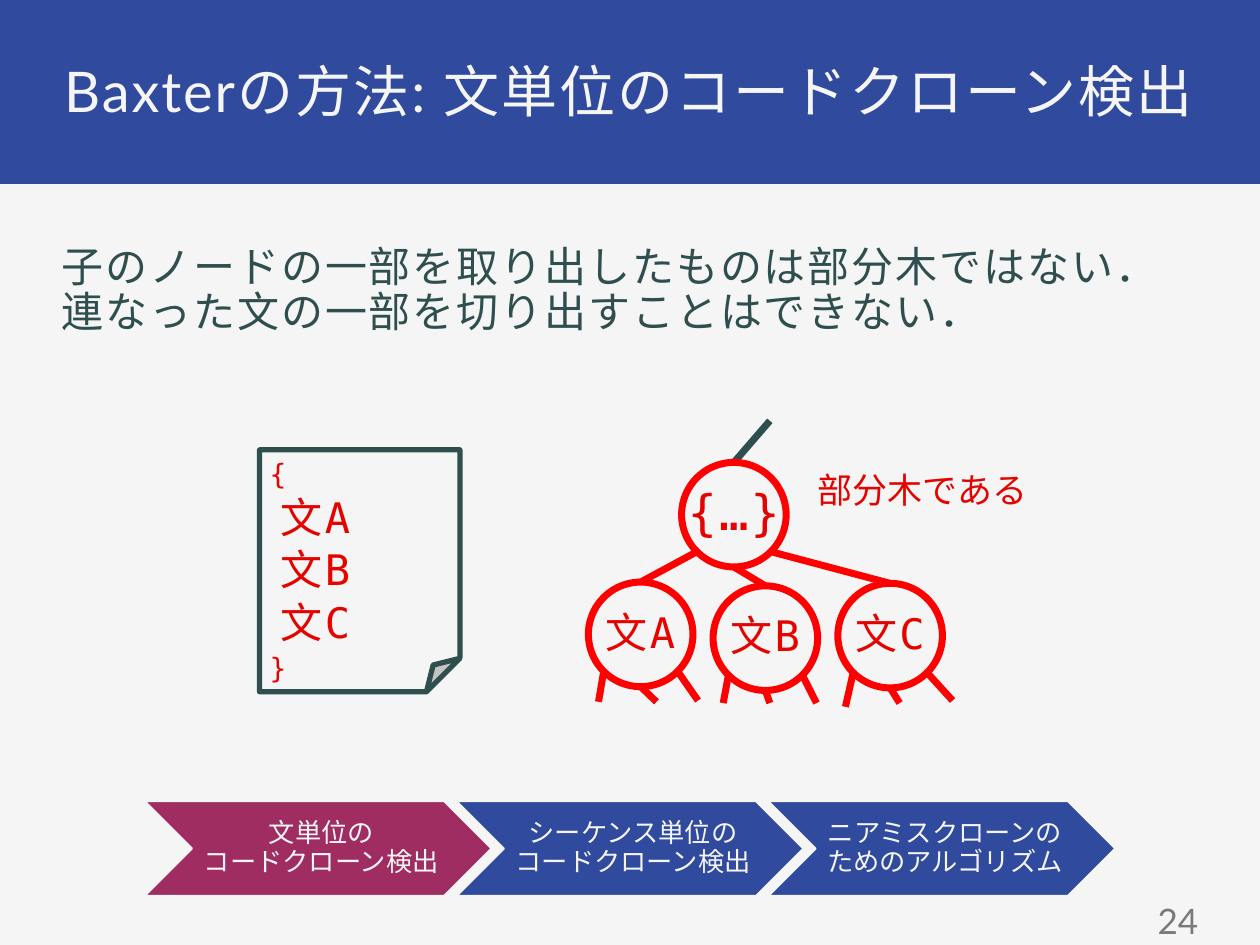
from dataclasses import dataclass
from math import cos, radians, sin

from lxml.etree import SubElement
from pptx import Presentation
from pptx.dml.color import RGBColor
from pptx.enum.shapes import MSO_CONNECTOR, MSO_SHAPE
from pptx.enum.text import MSO_ANCHOR, PP_ALIGN
from pptx.oxml.ns import qn
from pptx.util import Inches, Pt


@dataclass(frozen=True)
class Theme:
    paper: str = "F5F5F5"
    blue: str = "304A9E"
    plum: str = "9F2D62"
    slate: str = "2F4F4F"
    grey: str = "7A7A7A"
    red: str = "FF0000"
    code_red: str = "E50300"
    body_font: str = "Lato"
    code_font: str = "DejaVu Sans Mono"
    title_size: int = 32
    node_size: int = 28
    body_size: int = 24
    label_size: int = 20
    brace_size: int = 16
    step_size: int = 15
    tracking: str = "110"


THEME = Theme()
COLUMNS, ROWS = 100, 75
UNIT = Inches(10) / COLUMNS
CODE_SPACING = {"line_spacing": 0.9, "space_before": Pt(3), "space_after": Pt(1)}


@dataclass(frozen=True)
class Box:
    """A rectangle in grid columns and rows."""
    left: float
    top: float
    width: float
    height: float

    def inside(self, column, row, width, height):
        return Box(self.left + column, self.top + row, width, height)

    def point(self, column, row):
        return self.left + column, self.top + row

    def rim(self, degrees):
        """Point on the inscribed ellipse, clockwise from the right."""
        angle = radians(degrees)
        return self.point(self.width / 2 * (1 + cos(angle)),
                          self.height / 2 * (1 + sin(angle)))

    def lengths(self):
        return [round(n * UNIT) for n in (self.left, self.top, self.width, self.height)]


def apply(target, formats):
    for name, value in formats.items():
        setattr(target, name, value)


def rgb(color):
    return RGBColor.from_string(color)


def add_figure(shapes, preset, box, fill, line=None, weight=1):
    shape = shapes.add_shape(preset, *box.lengths())
    shape.shadow.inherit = False
    shape.fill.solid()
    shape.fill.fore_color.rgb = rgb(fill)
    if line:
        shape.line.color.rgb = rgb(line)
        shape.line.width = Pt(weight)
    else:
        shape.line.fill.background()
    return shape


def add_line(shapes, start, end, color):
    ends = [round(n * UNIT) for n in (*start, *end)]
    connector = shapes.add_connector(MSO_CONNECTOR.STRAIGHT, *ends)
    connector.line.color.rgb = rgb(color)
    connector.line.width = Pt(4)
    SubElement(connector._element.spPr, qn("a:effectLst"))


def write(shape, lines, color, font=THEME.body_font, margins=(0.06,) * 4,
          anchor=MSO_ANCHOR.TOP, wrap=True, tracked=False, **paragraph_format):
    """Fill a shape with (text, size) paragraphs; margins run left, top, right, bottom."""
    frame = shape.text_frame
    sides = ("margin_left", "margin_top", "margin_right", "margin_bottom")
    apply(frame, {"word_wrap": wrap, "vertical_anchor": anchor,
                  **dict(zip(sides, map(Inches, margins)))})
    for index, (text, size) in enumerate(lines):
        paragraph = frame.add_paragraph() if index else frame.paragraphs[0]
        paragraph.text = text
        apply(paragraph, {"alignment": PP_ALIGN.LEFT, **paragraph_format})
        for run in paragraph.runs:
            apply(run.font, {"size": Pt(size), "name": font})
            run.font.color.rgb = rgb(color)
            if tracked:
                run._r.get_or_add_rPr().set("spc", THEME.tracking)


def add_text(shapes, box, text, size, color, **formats):
    write(shapes.add_textbox(*box.lengths()), [(text, size)], color, **formats)


def add_header(shapes, box):
    add_figure(shapes, MSO_SHAPE.RECTANGLE, box, THEME.blue)
    add_text(shapes, box.inside(4.5, 4.5, 91.3, 5.9),
             "Baxterの方法: 文単位のコードクローン検出", THEME.title_size, THEME.paper,
             margins=(0.08, 0.08, 0.08, 0.06), tracked=True,
             alignment=PP_ALIGN.JUSTIFY, line_spacing=0.9, space_before=Pt(16))


def add_body(shapes, box):
    add_text(shapes, box,
             "子のノードの一部を取り出したものは部分木ではない．\n"
             "連なった文の一部を切り出すことはできない．",
             THEME.body_size, THEME.slate, tracked=True,
             line_spacing=0.9, space_before=Pt(14))


def add_page_number(shapes, box):
    add_text(shapes, box, "24", THEME.label_size, THEME.grey,
             anchor=MSO_ANCHOR.MIDDLE, alignment=PP_ALIGN.RIGHT)


def add_steps(shapes, box):
    steps = [("文単位の\nコードクローン検出", THEME.plum),
             ("シーケンス単位の\nコードクローン検出", THEME.blue),
             ("ニアミスクローンのためのアルゴリズム", THEME.blue)]
    width = 27.5
    pitch = (box.width - width) / (len(steps) - 1)
    group = shapes.add_group_shape().shapes
    for index, (text, fill) in enumerate(steps):
        step = box.inside(index * pitch, 0, width, box.height)
        add_figure(group, MSO_SHAPE.CHEVRON, step, fill, THEME.paper)
        add_text(group, step.inside(3.75, 0, 20, step.height), text,
                 THEME.step_size, THEME.paper, margins=(0.07, 0.02, 0.02, 0.02),
                 anchor=MSO_ANCHOR.MIDDLE, alignment=PP_ALIGN.CENTER, line_spacing=0.9)


def add_source_sheet(shapes, box):
    sheet = add_figure(shapes, MSO_SHAPE.FOLDED_CORNER, box, THEME.paper, THEME.slate, 3)
    statements = [(f" 文{name}", THEME.body_size) for name in "ABC"]
    write(sheet, [("{", THEME.brace_size), *statements, ("}", THEME.brace_size)],
          THEME.code_red, THEME.code_font, margins=(0.08,) * 4, wrap=False,
          tracked=True, **CODE_SPACING)


def add_node(shapes, box, text, size):
    node = add_figure(shapes, MSO_SHAPE.OVAL, box, THEME.paper, THEME.red, 4)
    write(node, [(text, size)], THEME.code_red, THEME.code_font, margins=(0.08,) * 4,
          anchor=MSO_ANCHOR.MIDDLE, wrap=False, tracked=True,
          alignment=PP_ALIGN.CENTER, **CODE_SPACING)


def add_tree(shapes, box):
    """Root with three statement nodes, each with three cut-off branches."""
    diameter = 8.3
    down_right, down, down_left, up = 45, 90, 135, 270
    # name, place, angle on the root, ends of the left, middle and right branches
    children = [
        ("文A", (0, 12.8), down_left, [(0.8, 22.3), (5.4, 22.3), (8.7, 22.2)]),
        ("文B", (9.9, 13.1), down, [(10.7, 22.4), (14.4, 22.4), (18.1, 22.4)]),
        ("文C", (19.8, 12.9), down_right, [(20.4, 22.7), (24.7, 22.4), (28.9, 22.2)]),
    ]
    group = shapes.add_group_shape().shapes
    root = box.inside(7.4, 3.3, diameter, diameter)
    add_line(group, box.point(14.4, 0), root.rim(up), THEME.slate)
    add_node(group, root, "{…}", THEME.node_size)
    for text, place, root_angle, branch_ends in children:
        child = box.inside(*place, diameter, diameter)
        add_node(group, child, text, THEME.body_size)
        add_line(group, child.rim(up), root.rim(root_angle), THEME.red)
        for angle, end in zip((down_left, down, down_right), branch_ends):
            add_line(group, child.rim(angle), box.point(*end), THEME.red)
    add_text(shapes, box.inside(17.2, 3.3, 18.8, 4.4), "部分木である",
             THEME.label_size, THEME.code_red, margins=(0.1, 0.05, 0.1, 0.05), wrap=False)


def main():
    presentation = Presentation()
    apply(presentation, {"slide_width": round(COLUMNS * UNIT),
                         "slide_height": round(ROWS * UNIT)})
    slide = presentation.slides.add_slide(presentation.slide_layouts[6])
    slide.background.fill.solid()
    slide.background.fill.fore_color.rgb = rgb(THEME.paper)
    regions = [(add_header, Box(-0.2, -0.2, 100.4, 14.8)),
               (add_body, Box(4.3, 18.9, 91.3, 51.8)),
               (add_page_number, Box(73.2, 71.1, 22.5, 3.9)),
               (add_steps, Box(11.5, 63.6, 77, 7.5)),
               (add_source_sheet, Box(20.6, 35.7, 15.9, 19.2)),
               (add_tree, Box(46.7, 33.4, 28.9, 22.7))]
    for add_region, box in regions:
        add_region(slide.shapes, box)
    presentation.save("out.pptx")


if __name__ == "__main__":
    main()
